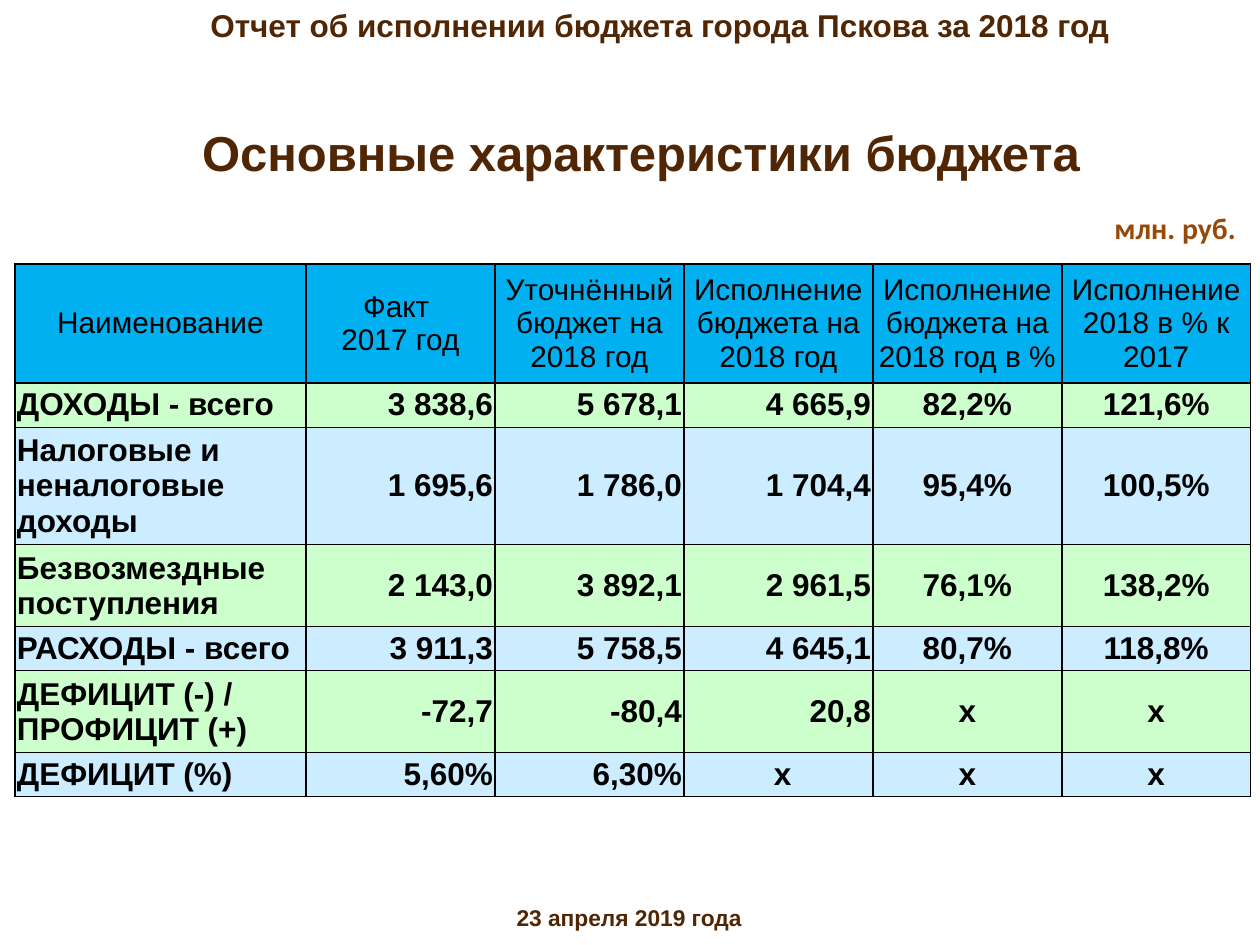
from dataclasses import dataclass

import lxml.etree
import pptx
import pptx.dml.color
import pptx.enum.text
import pptx.oxml.ns
import pptx.util

SCALE = 914400 // 126
ALIGN = pptx.enum.text.PP_ALIGN
ANCHOR = pptx.enum.text.MSO_ANCHOR
AUTO_SIZE = pptx.enum.text.MSO_AUTO_SIZE
BROWN = "502604"
BLACK = "000000"
HEADER_FILL = "00B0F0"
BAND_FILLS = ("CCFFCC", "CCECFF")
COLUMN_WIDTHS = [291] + [189] * 5
ROW_HEIGHTS = [119, 44, 118, 82, 44, 82, 44]
ROWS = [
    ["Наименование", "Факт \n2017 год", "Уточнённый бюджет на 2018 год",
     "Исполнение бюджета на 2018 год", "Исполнение бюджета на 2018 год в %",
     "Исполнение 2018 в % к 2017"],
    ["ДОХОДЫ - всего", "3 838,6", "5 678,1", "4 665,9", "82,2%", "121,6%"],
    ["Налоговые и неналоговые доходы", "1 695,6", "1 786,0", "1 704,4", "95,4%", "100,5%"],
    ["Безвозмездные поступления", "2 143,0", "3 892,1", "2 961,5", "76,1%", "138,2%"],
    ["РАСХОДЫ - всего", "3 911,3", "5 758,5", "4 645,1", "80,7%", "118,8%"],
    ["ДЕФИЦИТ (-) / ПРОФИЦИТ (+)", "-72,7", "-80,4", "20,8", "x", "x"],
    ["ДЕФИЦИТ (%)", "5,60%", "6,30%", " x", "x", "x"],
]


@dataclass
class Style:
    size: int
    color: str = BROWN
    bold: bool = True
    font: str = "Arial"
    align: ALIGN = ALIGN.LEFT


@dataclass
class Label:
    text: str
    left: int
    top: int
    width: int
    height: int
    style: Style
    wrap: bool = True
    indent: int = 0


TITLE = Label("Основные характеристики бюджета", 184, 116, 914, 72,
              Style(28, align=ALIGN.CENTER), wrap=False)
LABELS = [
    Label("Отчет об исполнении бюджета города Пскова за 2018 год", 0, 0, 1260, 50,
          Style(18), indent=198),
    Label("23 апреля 2019 года", -1, 898, 1260, 40, Style(13, align=ALIGN.CENTER)),
    Label("млн. руб.", 1102, 204, 148, 49, Style(17, "984807", font="Calibri"), wrap=False),
]


def px(length: int) -> int:
    return pptx.util.Emu(length * SCALE)


def rgb(color: str) -> pptx.dml.color.RGBColor:
    return pptx.dml.color.RGBColor.from_string(color)


def write(paragraph, text: str, style: Style) -> None:
    paragraph.alignment = style.align
    for index, line in enumerate(text.split("\n")):
        if index:
            paragraph.add_line_break()
        run = paragraph.add_run()
        run.text = line
        run.font.name = style.font
        run.font.size = pptx.util.Pt(style.size)
        run.font.bold = style.bold
        run.font.color.rgb = rgb(style.color)


def fill_label(shape, label: Label) -> None:
    shape.left, shape.top = px(label.left), px(label.top)
    shape.width, shape.height = px(label.width), px(label.height)
    frame = shape.text_frame
    frame.word_wrap = label.wrap
    frame.auto_size = AUTO_SIZE.SHAPE_TO_FIT_TEXT
    frame.vertical_anchor = ANCHOR.TOP
    paragraph = frame.paragraphs[0]
    if label.indent:
        paragraph._p.get_or_add_pPr().set("marL", str(px(label.indent)))
    write(paragraph, label.text, label.style)


def add_border(cell, side: str, width: float) -> None:
    properties = cell._tc.get_or_add_tcPr()
    qn = pptx.oxml.ns.qn
    line = lxml.etree.SubElement(properties, qn(f"a:ln{side}"), w=str(pptx.util.Pt(width)))
    solid = lxml.etree.SubElement(line, qn("a:solidFill"))
    lxml.etree.SubElement(solid, qn("a:srgbClr"), val=BLACK)


def cell_align(row: int, column: int, text: str) -> ALIGN:
    if row == 0 or column > 3 or text.strip() == "x":
        return ALIGN.CENTER
    return ALIGN.RIGHT if column else ALIGN.LEFT


def fill_cell(cell, row: int, column: int, text: str) -> None:
    last = len(ROWS) - 1
    borders = {"L": 1, "R": 1, "T": 1 if row < 2 else 0.5, "B": 1 if row in (0, last) else 0.5}
    for side, width in borders.items():
        add_border(cell, side, width)
    cell.fill.solid()
    cell.fill.fore_color.rgb = rgb(BAND_FILLS[(row - 1) % 2] if row else HEADER_FILL)
    cell.vertical_anchor = ANCHOR.MIDDLE
    cell.margin_left = cell.margin_right = cell.margin_top = cell.margin_bottom = px(2)
    style = Style(18 if row else 17, BLACK, row > 0, align=cell_align(row, column, text))
    write(cell.text_frame.paragraphs[0], text, style)


def add_budget_table(slide) -> None:
    table = slide.shapes.add_table(len(ROWS), len(COLUMN_WIDTHS), px(15), px(264),
                                   px(sum(COLUMN_WIDTHS)), px(sum(ROW_HEIGHTS))).table
    table.first_row = table.horz_banding = False
    for column, width in zip(table.columns, COLUMN_WIDTHS):
        column.width = px(width)
    for row_index, texts in enumerate(ROWS):
        table.rows[row_index].height = px(ROW_HEIGHTS[row_index])
        for column_index, text in enumerate(texts):
            fill_cell(table.cell(row_index, column_index), row_index, column_index, text)


def main() -> None:
    presentation = pptx.Presentation()
    presentation.slide_width, presentation.slide_height = px(1260), px(945)
    slide = presentation.slides.add_slide(presentation.slide_layouts[5])
    fill_label(slide.shapes.title, TITLE)
    for label in LABELS:
        fill_label(slide.shapes.add_textbox(0, 0, 0, 0), label)
    add_budget_table(slide)
    presentation.save("out.pptx")


if __name__ == "__main__":
    main()
